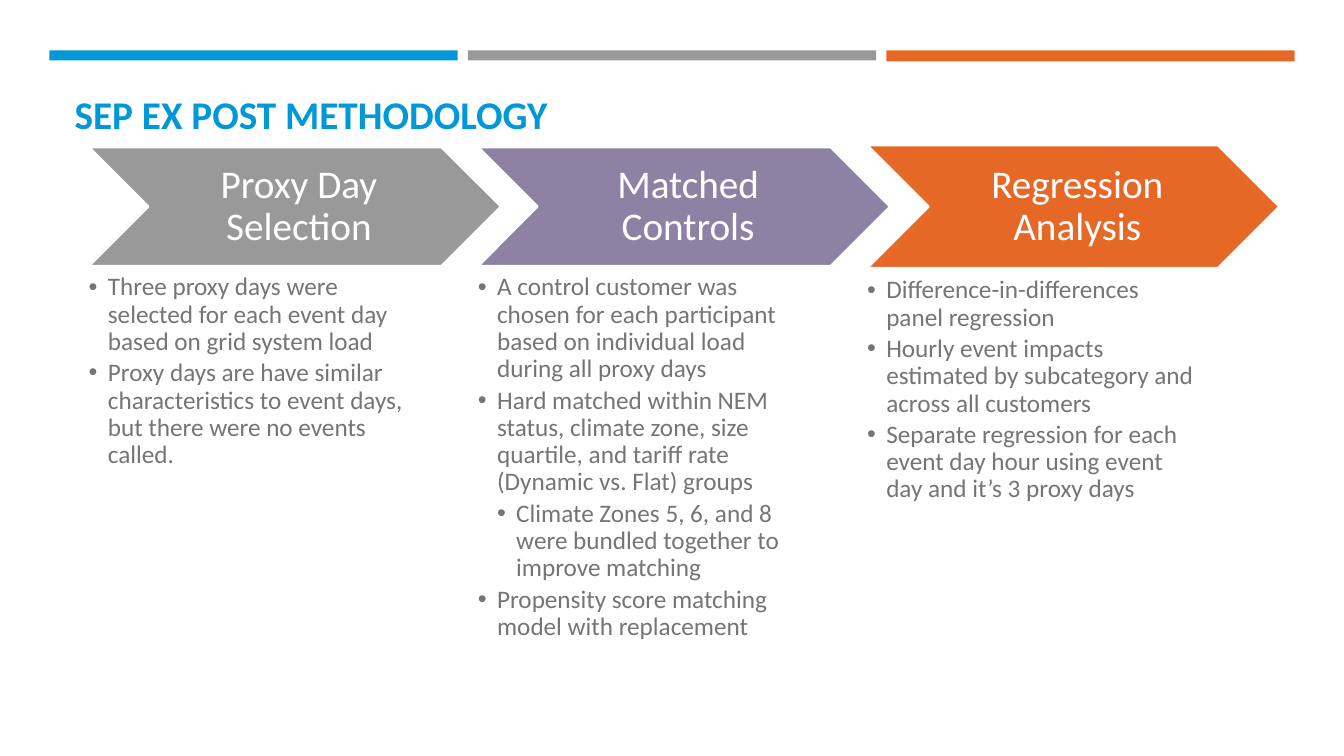
from dataclasses import dataclass
from typing import Any

import lxml.etree
import pptx
import pptx.dml.color
import pptx.enum.shapes
import pptx.enum.text
import pptx.oxml.ns
import pptx.util

EMU_PER_PX = 9144  # 100 px to the inch
FONT = "Calibri"
BLUE, GRAY, PURPLE, ORANGE = "0098D7", "999999", "8D82A3", "E66827"
WHITE, BODY_GRAY = "FFFFFF", "757575"

BAR_LEFT, BAR_TOP, BAR_WIDTH, BAR_STEP = 49, 50, 405, 415
COLUMN_LEFT, COLUMN_STEP = 88, 386
CHEVRON_WIDTH = 409
BODY_WIDTH, BODY_HEIGHT = 328, 376
BULLET_INDENT = 19


@dataclass(frozen=True)
class Bar:
    color: str
    height: int


@dataclass(frozen=True)
class Bullet:
    text: str
    level: int = 0


@dataclass(frozen=True)
class Stage:
    heading: str
    color: str
    chevron_top: int
    chevron_height: int
    body_top: int
    bullets: tuple[Bullet, ...]


BARS = (Bar(BLUE, 10), Bar(GRAY, 10), Bar(ORANGE, 11))

STAGES = (
    Stage("Proxy Day Selection", GRAY, 146, 118, 272, (
        Bullet("Three proxy days were selected for each event day based on grid system load"),
        Bullet("Proxy days are have similar characteristics to event days, "
               "but there were no events called."),
    )),
    Stage("Matched Controls", PURPLE, 146, 118, 272, (
        Bullet("A control customer was chosen for each participant based on "
               "individual load during all proxy days"),
        Bullet("Hard matched within NEM status, climate zone, size quartile, "
               "and tariff rate (Dynamic vs. Flat) groups"),
        Bullet("Climate Zones 5, 6, and 8 were bundled together to improve matching", 1),
        Bullet("Propensity score matching model with replacement"),
    )),
    Stage("Regression Analysis", ORANGE, 144, 122, 275, (
        Bullet("Difference-in-differences panel regression"),
        Bullet("Hourly event impacts estimated by subcategory and across all customers"),
        Bullet("Separate regression for each event day hour using event day "
               "and it’s 3 proxy days"),
    )),
)


def px(length: int) -> pptx.util.Emu:
    return pptx.util.Emu(length * EMU_PER_PX)


def rgb(color: str) -> pptx.dml.color.RGBColor:
    return pptx.dml.color.RGBColor.from_string(color)


def set_values(target: Any, values: dict[str, Any]) -> None:
    for name, value in values.items():
        setattr(target, name, value)


def place(shape: Any, left: int, top: int, width: int, height: int) -> None:
    set_values(shape, {"left": px(left), "top": px(top),
                       "width": px(width), "height": px(height)})


def format_frame(frame: Any, anchor: Any, insets: tuple[int, int, int, int]) -> None:
    left, top, right, bottom = insets
    set_values(frame, {
        "word_wrap": True,
        "auto_size": pptx.enum.text.MSO_AUTO_SIZE.NONE,
        "vertical_anchor": anchor,
        "margin_left": px(left), "margin_top": px(top),
        "margin_right": px(right), "margin_bottom": px(bottom),
    })


def write(paragraph: Any, text: str, size: int, color: str, bold: bool = False) -> None:
    run = paragraph.add_run()
    run.text = text
    set_values(run.font, {"name": FONT, "size": pptx.util.Pt(size), "bold": bold})
    run.font.color.rgb = rgb(color)


def add_filled_shape(slide: Any, kind: Any, box: tuple[int, int, int, int], color: str) -> Any:
    shape = slide.shapes.add_shape(kind, *map(px, box))
    shape.shadow.inherit = False
    shape.fill.solid()
    shape.fill.fore_color.rgb = rgb(color)
    shape.line.fill.background()
    return shape


def add_bar(slide: Any, index: int, bar: Bar) -> None:
    box = (BAR_LEFT + index * BAR_STEP, BAR_TOP, BAR_WIDTH, bar.height)
    add_filled_shape(slide, pptx.enum.shapes.MSO_SHAPE.RECTANGLE, box, bar.color)


def fill_title(title: Any, text: str) -> None:
    place(title, 64, 77, 1206, 64)
    format_frame(title.text_frame, pptx.enum.text.MSO_ANCHOR.BOTTOM, (10, 5, 10, 5))
    paragraph = title.text_frame.paragraphs[0]
    paragraph.alignment = pptx.enum.text.PP_ALIGN.LEFT
    write(paragraph, text, 28, BLUE, bold=True)


def add_chevron(slide: Any, left: int, stage: Stage) -> None:
    box = (left, stage.chevron_top, CHEVRON_WIDTH, stage.chevron_height)
    chevron = add_filled_shape(slide, pptx.enum.shapes.MSO_SHAPE.CHEVRON, box, stage.color)
    chevron.line.color.rgb = rgb(WHITE)
    chevron.line.width = pptx.util.Pt(1.75)
    format_frame(chevron.text_frame, pptx.enum.text.MSO_ANCHOR.MIDDLE, (12, 4, 4, 4))
    paragraph = chevron.text_frame.paragraphs[0]
    set_values(paragraph, {"alignment": pptx.enum.text.PP_ALIGN.CENTER, "line_spacing": 0.9})
    write(paragraph, stage.heading, 28, WHITE)


def set_bullet(paragraph: Any, level: int) -> None:
    properties = paragraph._p.get_or_add_pPr()
    properties.set("marL", str(px(BULLET_INDENT * (level + 1))))
    properties.set("indent", str(-px(BULLET_INDENT)))
    for tag, attribute, value in (("a:buFont", "typeface", "Arial"), ("a:buChar", "char", "•")):
        element = lxml.etree.SubElement(properties, pptx.oxml.ns.qn(tag))
        element.set(attribute, value)


def fill_body(body: Any, left: int, stage: Stage) -> None:
    place(body, left, stage.body_top, BODY_WIDTH, BODY_HEIGHT)
    frame = body.text_frame
    format_frame(frame, pptx.enum.text.MSO_ANCHOR.TOP, (0, 0, 0, 0))
    for index, bullet in enumerate(stage.bullets):
        paragraph = frame.add_paragraph() if index else frame.paragraphs[0]
        set_bullet(paragraph, bullet.level)
        set_values(paragraph, {
            "level": bullet.level,
            "alignment": pptx.enum.text.PP_ALIGN.LEFT,
            "line_spacing": 0.9,
            "space_before": pptx.util.Pt(0),
            "space_after": pptx.util.Pt(3),
        })
        write(paragraph, bullet.text, 18, BODY_GRAY)


def main() -> None:
    presentation = pptx.Presentation()
    set_values(presentation, {"slide_width": px(1333), "slide_height": px(750)})
    slide = presentation.slides.add_slide(presentation.slide_layouts.get_by_name("Comparison"))
    title, *bodies = slide.placeholders
    for spare in bodies[len(STAGES):]:
        spare.element.getparent().remove(spare.element)

    for index, bar in enumerate(BARS):
        add_bar(slide, index, bar)
    fill_title(title, "SEP EX POST METHODOLOGY")
    for index, (stage, body) in enumerate(zip(STAGES, bodies)):
        left = COLUMN_LEFT + index * COLUMN_STEP
        add_chevron(slide, left, stage)
        fill_body(body, left, stage)

    presentation.save("out.pptx")


if __name__ == "__main__":
    main()
